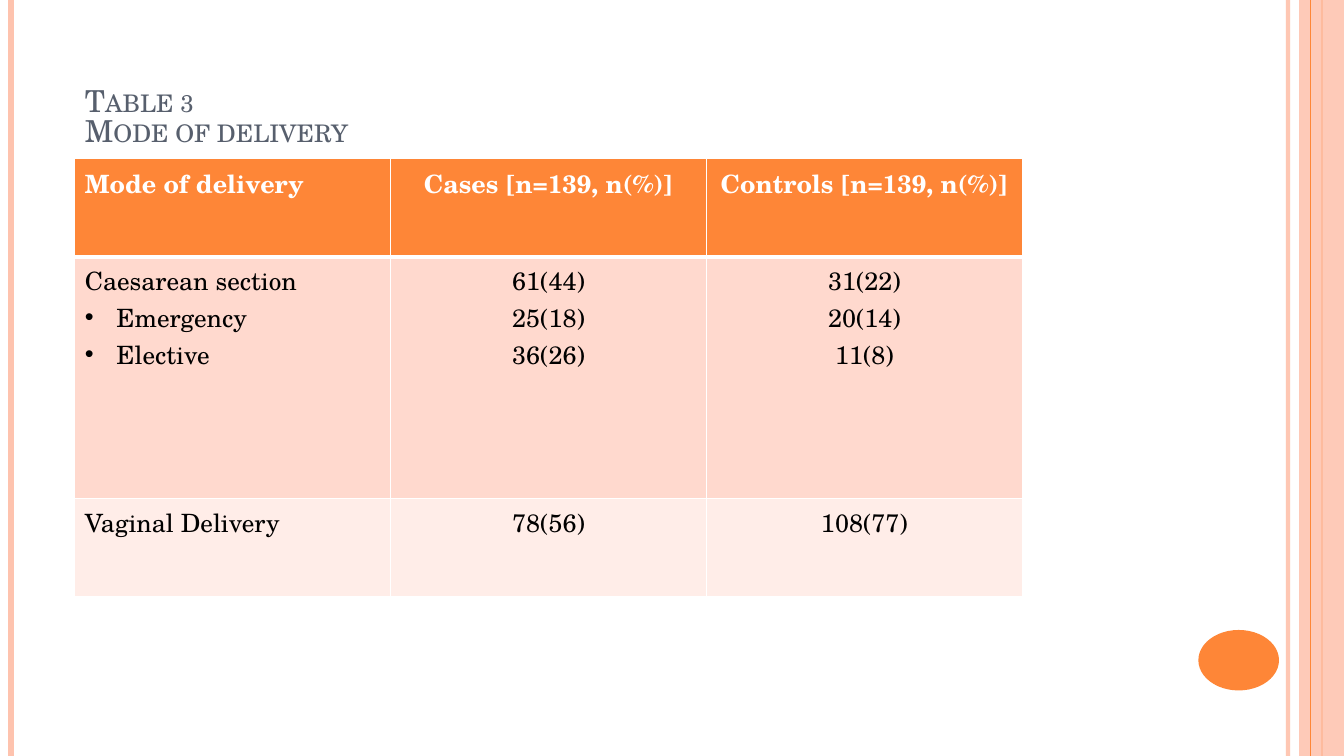
import pptx
import pptx.util
import pptx.oxml
import pptx.oxml.ns
import pptx.dml.color
import pptx.enum.shapes
import pptx.enum.text

Pt = pptx.util.Pt
qn = pptx.oxml.ns.qn
NS = pptx.oxml.ns.nsdecls("a")
ALIGN = pptx.enum.text.PP_ALIGN
KIND = pptx.enum.shapes.MSO_SHAPE
WIDE, HIGH = 960, 540
HUES = {
    "white": "FFFFFF", "black": "000000", "slate": "575F6D",
    "orange": "FE8637", "peach": "FEC3AE", "band": "FFD9CE", "pale": "FFEDE8",
}
ROWS = [
    (70.2, "orange", ["Mode of delivery", "Cases [n=139, n(%)]", "Controls [n=139, n(%)]"]),
    (172.8, "band", ["Caesarean section\n• Emergency\n• Elective",
                     "61(44)\n25(18)\n36(26)", "31(22)\n20(14)\n11(8)"]),
    (70.2, "pale", ["Vaginal Delivery", "78(56)", "108(77)"]),
]


class Page:
    face = "TeX Gyre Schola"

    def __init__(self, slide):
        self.slide = slide
        self.shapes = slide.shapes

    def hue(self, name):
        return pptx.dml.color.RGBColor.from_string(HUES[name])

    def fade(self, item, share):
        color = item.find(".//" + qn("a:srgbClr"))
        color.append(pptx.oxml.parse_xml(f'<a:alpha {NS} val="{share * 1000}"/>'))

    def type(self, para, size, color, bold=False):
        for run in para.runs:
            font = run.font
            font.name, font.size, font.bold = self.face, Pt(size), bold
            font.color.rgb = self.hue(color)

    def rule(self, x, width, color, share=100):
        line = self.shapes.add_connector(
            pptx.enum.shapes.MSO_CONNECTOR.STRAIGHT, Pt(x), 0, Pt(x), Pt(HIGH))
        line.line.width = Pt(width)
        line.line.color.rgb = self.hue(color)
        line._element.spPr.append(pptx.oxml.parse_xml(f"<a:effectLst {NS}/>"))
        if share < 100:
            self.fade(line._element, share)

    def block(self, kind, box, color, share=100):
        shape = self.shapes.add_shape(kind, *map(Pt, box))
        shape.shadow.inherit = False
        shape.fill.solid()
        shape.fill.fore_color.rgb = self.hue(color)
        shape.line.fill.background()
        if share < 100:
            self.fade(shape._element, share)

    def title(self, text, box):
        head = self.shapes.title
        head.left, head.top, head.width, head.height = map(Pt, box)
        frame = head.text_frame
        frame.text = text
        frame.word_wrap = True
        frame.auto_size = pptx.enum.text.MSO_AUTO_SIZE.NONE
        frame.vertical_anchor = pptx.enum.text.MSO_ANCHOR.BOTTOM
        para = frame.paragraphs[0]
        para.alignment = ALIGN.LEFT
        para.line_spacing = 0.82
        self.type(para, 21.6, "slate")
        for run in para.runs:
            run.font._element.set("cap", "small")

    def bullet(self, para):
        para.text = para.text.removeprefix("• ")
        props = para._p.get_or_add_pPr()
        props.set("marL", str(Pt(22.5)))
        props.set("indent", str(Pt(-22.5)))
        props.append(pptx.oxml.parse_xml(f'<a:buFont {NS} typeface="Arial"/>'))
        props.append(pptx.oxml.parse_xml(f'<a:buChar {NS} char="•"/>'))

    def edge(self, cell, side, width):
        cell._tc.get_or_add_tcPr().append(pptx.oxml.parse_xml(
            f'<a:ln{side} {NS} w="{Pt(width)}"><a:solidFill>'
            f'<a:srgbClr val="{HUES["white"]}"/></a:solidFill></a:ln{side}>'))

    def cell(self, cell, text, fill, row, col):
        for side in "LRTB":
            thick = (side, row) in (("B", 0), ("T", 1))
            self.edge(cell, side, 3 if thick else 1)
        cell.fill.solid()
        cell.fill.fore_color.rgb = self.hue(fill)
        cell.text_frame.text = text
        for para in cell.text_frame.paragraphs:
            para.alignment = ALIGN.CENTER if col else ALIGN.LEFT
            if para.text.startswith("•"):
                self.bullet(para)
            self.type(para, 18, "black" if row else "white", row == 0)

    def table(self, rows, box):
        count = len(rows[0][2])
        grid = self.shapes.add_table(len(rows), count, *map(Pt, box)).table
        for col in grid.columns:
            col.width = Pt(box[2] / count)
        for r, (height, fill, texts) in enumerate(rows):
            grid.rows[r].height = Pt(height)
            for c, text in enumerate(texts):
                self.cell(grid.cell(r, c), text, fill, r, c)


def main():
    deck = pptx.Presentation()
    deck.slide_width, deck.slide_height = Pt(WIDE), Pt(HIGH)
    page = Page(deck.slides.add_slide(deck.slide_layouts[5]))
    page.rule(920, 3, "peach", 93)
    page.rule(8, 4.5, "peach")
    page.rule(944, 1.5, "orange")
    page.block(KIND.RECTANGLE, (928, 0, 32, HIGH), "peach", 87)
    page.rule(936, 0.75, "orange")
    page.block(KIND.OVAL, (856, 450, 57.6, 43.2), "orange")
    page.title("Table 3\vMode of delivery", (53.5, 48.2, 676.8, 61.2))
    page.table(ROWS, (53.5, 113.2, 676.8, sum(row[0] for row in ROWS)))
    deck.save("out.pptx")


if __name__ == "__main__":
    main()
